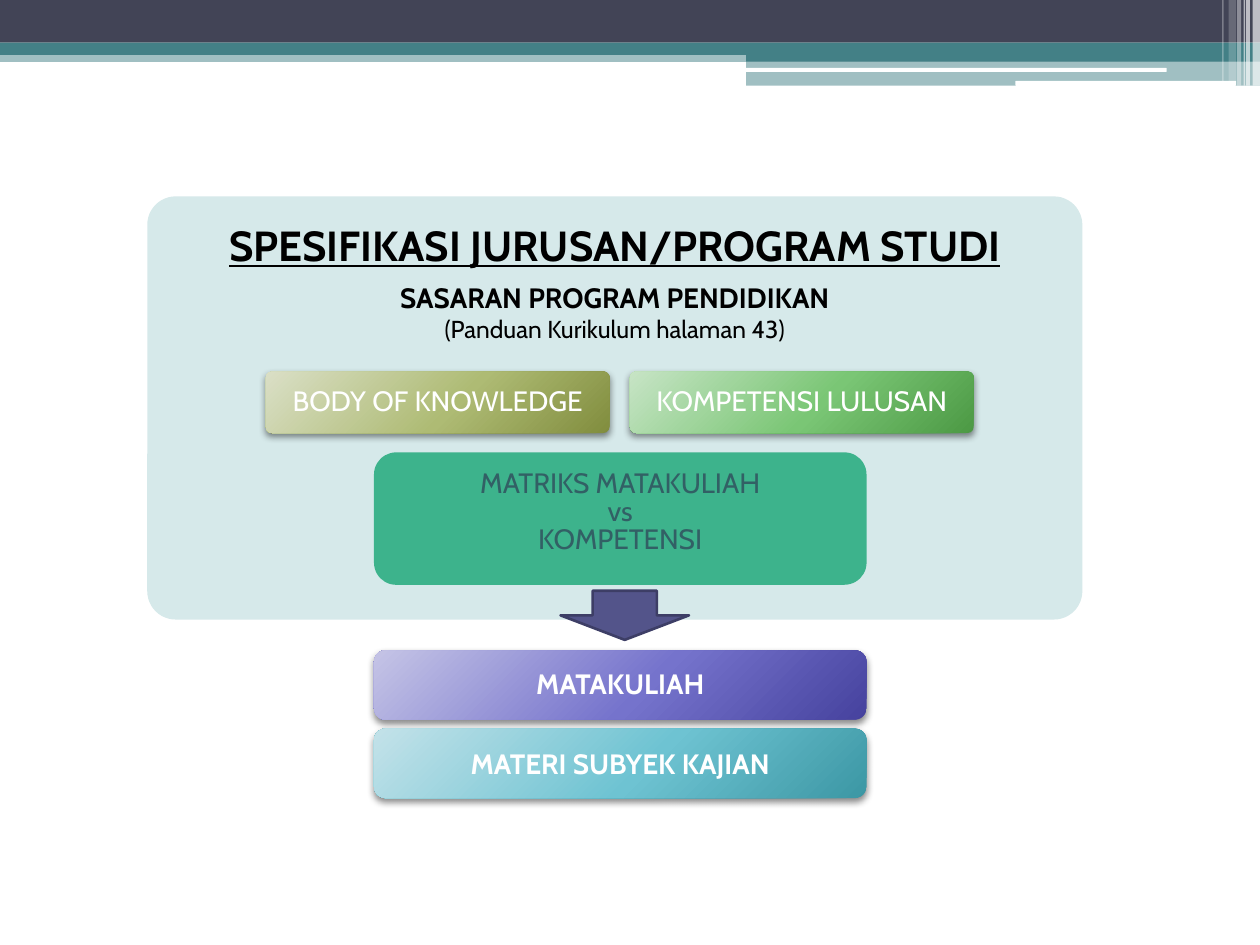
from collections import namedtuple

from lxml import etree
from pptx import Presentation
from pptx.dml.color import RGBColor
from pptx.enum.shapes import MSO_SHAPE
from pptx.enum.text import MSO_ANCHOR, PP_ALIGN
from pptx.oxml import parse_xml
from pptx.oxml.ns import qn
from pptx.util import Cm, Pt

RECT = MSO_SHAPE.RECTANGLE
ROUNDED = MSO_SHAPE.ROUNDED_RECTANGLE
DOWN_ARROW = MSO_SHAPE.DOWN_ARROW
CENTER = PP_ALIGN.CENTER
TOP, MIDDLE = MSO_ANCHOR.TOP, MSO_ANCHOR.MIDDLE

BLACK = RGBColor(0x00, 0x00, 0x00)
WHITE = RGBColor(0xFF, 0xFF, 0xFF)
SLATE = RGBColor(0x42, 0x44, 0x56)
TEAL = RGBColor(0x43, 0x80, 0x86)
PALE_TEAL = RGBColor(0xD6, 0xE9, 0xEA)
DEEP_TEAL = RGBColor(0x32, 0x60, 0x65)
JADE = RGBColor(0x3D, 0xB3, 0x8C)
INDIGO = RGBColor(0x53, 0x54, 0x8A)
DARK_INDIGO = RGBColor(0x3D, 0x3E, 0x66)
OLIVES = (RGBColor(0xDA, 0xDF, 0xC6), RGBColor(0xAE, 0xBB, 0x74), RGBColor(0x81, 0x8D, 0x3E))
GREENS = (RGBColor(0xC7, 0xE4, 0xC5), RGBColor(0x7A, 0xC6, 0x75), RGBColor(0x4C, 0x99, 0x44))
VIOLETS = (RGBColor(0xC5, 0xC4, 0xE6), RGBColor(0x75, 0x73, 0xCC), RGBColor(0x46, 0x42, 0x9E))
AQUAS = (RGBColor(0xC3, 0xE2, 0xE9), RGBColor(0x6E, 0xC3, 0xD2), RGBColor(0x3C, 0x97, 0xA4))

FONT = "Cabin"
DRAWING_NS = "http://schemas.openxmlformats.org/drawingml/2006/main"
Box = namedtuple("Box", "left top width height")


def inside(box, left, top, width, height):
    return Box(box.left + left, box.top + top, width, height)


def add_block(page, box, kind, color=None, opacity=100, corner=None):
    shape = page.shapes.add_shape(kind, *(Cm(length) for length in box))
    shape.shadow.inherit = False
    shape.line.fill.background()
    if corner is not None:
        shape.adjustments[0] = corner
    if color is not None:
        shape.fill.solid()
        shape.fill.fore_color.rgb = color
    if opacity < 100:
        tint = shape.element.spPr.find(".//" + qn("a:srgbClr"))
        etree.SubElement(tint, qn("a:alpha"), val=str(opacity * 1000))
    return shape


def add_glossy_block(page, box, colors, corner=None):
    shape = add_block(page, box, ROUNDED, corner=corner)
    properties = shape.element.spPr
    stops = "".join(
        f'<a:gs pos="{position}"><a:srgbClr val="{color}"/></a:gs>'
        for position, color in zip((0, 55000, 100000), colors)
    )
    gradient = parse_xml(
        f'<a:gradFill xmlns:a="{DRAWING_NS}"><a:gsLst>{stops}</a:gsLst>'
        '<a:path path="circle"><a:fillToRect l="-40000" t="-90000" '
        'r="140000" b="190000"/></a:path></a:gradFill>'
    )
    properties.find(qn("a:prstGeom")).addnext(gradient)
    shadow = parse_xml(
        f'<a:outerShdw xmlns:a="{DRAWING_NS}" blurRad="{Pt(4)}" dist="{Pt(2)}" '
        'dir="5400000" rotWithShape="0"><a:srgbClr val="000000">'
        '<a:alpha val="45000"/></a:srgbClr></a:outerShdw>'
    )
    properties.find(qn("a:effectLst")).append(shadow)
    return shape


def write(shape, lines, color, bold=False, size=16, anchor=MIDDLE, spacing=None, after=0):
    frame = shape.text_frame
    frame.text = "\n".join(lines)
    frame.word_wrap = True
    frame.vertical_anchor = anchor
    frame.margin_left = frame.margin_right = Cm(0.25)
    frame.margin_top = frame.margin_bottom = Cm(0.13)
    for para in frame.paragraphs:
        para.alignment = CENTER
        para.space_after = Pt(after)
        if spacing is not None:
            para.line_spacing = spacing
        for span in para.runs:
            span.font.name = FONT
            span.font.size = Pt(size)
            span.font.bold = bold
            span.font.color.rgb = color
    return frame


def add_header(page, box):
    bands = (
        (0, 1.02, box.width, 0.23, TEAL, 50),
        (0, 0, box.width, 0.86, SLATE, 100),
        (0, 0.86, box.width, 0.25, TEAL, 100),
        (15.04, 0.99, 10.36, 0.25, TEAL, 100),
        (15.04, 1.22, 10.36, 0.51, TEAL, 50),
    )
    for left, top, width, height, color, opacity in bands:
        add_block(page, inside(box, left, top, width, height), RECT, color, opacity)
    for rule in ((15.01, 1.37, 8.51, 0.08), (20.47, 1.63, 4.45, 0.1)):
        add_block(page, inside(box, *rule), ROUNDED, WHITE)
    stripes = (
        (25.25, 0.15, 1.73, 65),
        (25.12, 0.08, 1.73, 65),
        (25.07, 0.03, 1.73, 60),
        (24.94, 0.08, 1.73, 40),
        (24.77, 0.15, 1.63, 20),
        (24.64, 0.03, 1.63, 30),
    )
    for left, width, height, opacity in stripes:
        add_block(page, inside(box, left, 0, width, height), RECT, WHITE, opacity)


def add_program_panel(page, box):
    panel = add_block(page, box, ROUNDED, PALE_TEAL, corner=0.067)
    lines = (
        "SPESIFIKASI JURUSAN/PROGRAM STUDI",
        "SASARAN PROGRAM PENDIDIKAN",
        "(Panduan Kurikulum halaman 43)",
    )
    frame = write(panel, lines, BLACK, bold=True, anchor=TOP)
    frame.margin_top = Cm(0.3)
    heading, _, note = frame.paragraphs
    heading.space_after = Pt(6)
    heading.runs[0].font.size = Pt(24)
    heading.runs[0].font.underline = True
    note.runs[0].font.size = Pt(14)
    note.runs[0].font.bold = False

    inputs = (("BODY OF KNOWLEDGE", OLIVES), ("KOMPETENSI LULUSAN", GREENS))
    for index, (label, colors) in enumerate(inputs):
        place = inside(box, 2.39 + index * 7.34, 3.53, 6.93, 1.24)
        shape = add_glossy_block(page, place, colors, corner=0.1)
        write(shape, [label], WHITE, spacing=0.9, after=6)

    matrix = add_block(page, inside(box, 4.57, 5.16, 9.93, 2.67), ROUNDED, JADE)
    lines = ("MATRIKS MATAKULIAH", "vs", "KOMPETENSI")
    write(matrix, lines, DEEP_TEAL, spacing=Pt(10), after=6)


def add_arrow(page, box):
    arrow = add_block(page, box, DOWN_ARROW, INDIGO)
    arrow.line.color.rgb = DARK_INDIGO
    arrow.line.width = Pt(1.5)


def add_course_bars(page, box):
    height, pitch = 1.4, 1.58
    bars = (("MATAKULIAH", VIOLETS, 0.9, 6), ("MATERI SUBYEK KAJIAN", AQUAS, 1, 0))
    for index, (label, colors, spacing, after) in enumerate(bars):
        place = inside(box, 0, index * pitch, box.width, height)
        shape = add_glossy_block(page, place, colors)
        write(shape, [label], WHITE, bold=True, spacing=spacing, after=after)


def main():
    deck = Presentation()
    deck.slide_width, deck.slide_height = Cm(25.4), Cm(19.05)
    page = deck.slides.add_slide(deck.slide_layouts[6])
    add_header(page, Box(0, 0, 25.4, 1.73))
    add_program_panel(page, Box(2.97, 3.96, 18.85, 8.53))
    add_arrow(page, Box(11.3, 11.91, 2.59, 0.99))
    add_course_bars(page, Box(7.54, 13.11, 9.93, 2.98))
    deck.save("out.pptx")


if __name__ == "__main__":
    main()
